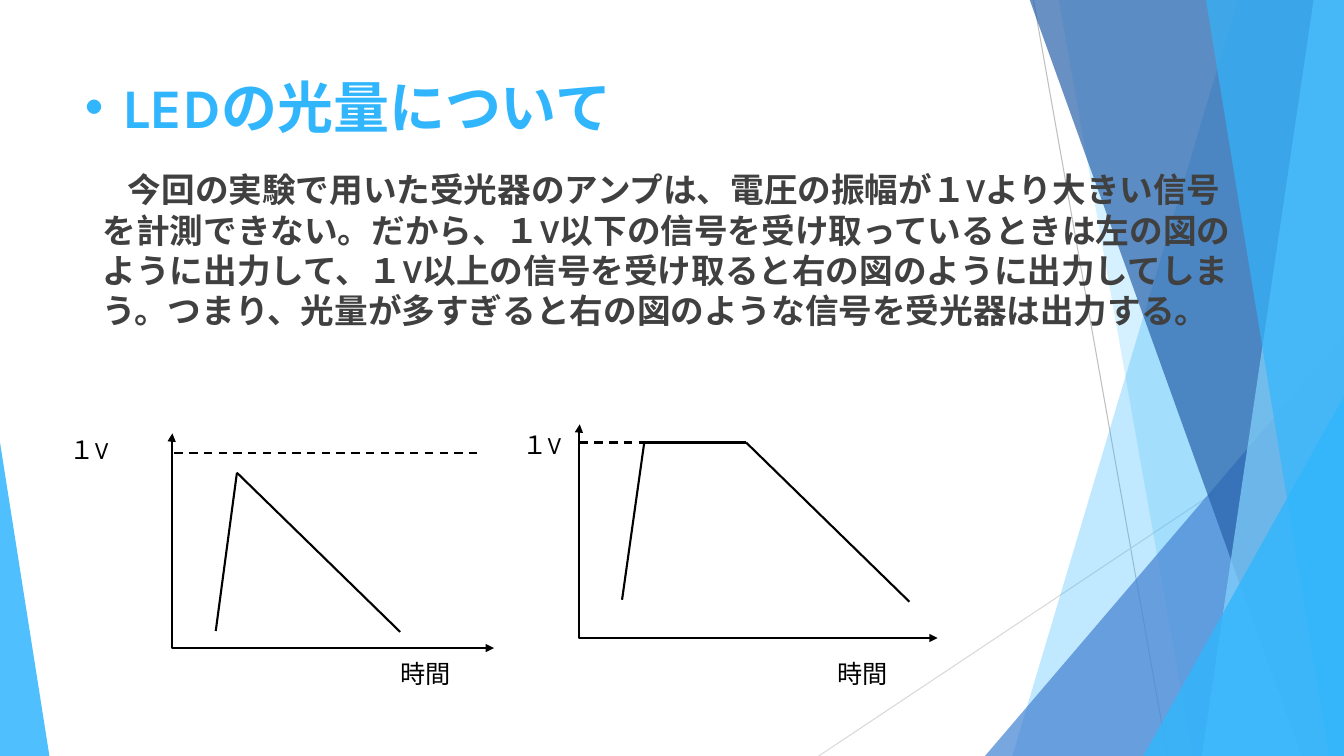
from dataclasses import dataclass

from lxml import etree
from pptx import Presentation
from pptx import util as u
from pptx.dml.color import RGBColor
from pptx.enum import dml, shapes, text
from pptx.oxml import ns


@dataclass(frozen=True)
class Theme:
    """Colours, font and type sizes of the slide."""
    sky: str = "31B6FD"
    pale: str = "83D3FE"
    blue: str = "4584D3"
    navy: str = "2862AA"
    grey: str = "BFBFBF"
    light: str = "D9D9D9"
    body: str = "404040"
    ink: str = "000000"
    font: str = "Karla"
    title_size: int = 40
    body_size: int = 24
    label_size: int = 18


class SlideBuilder:
    """Draws styled elements on one slide."""

    def __init__(self, slide, theme):
        """Keep the slide and its theme."""
        self.shapes = slide.shapes
        self.theme = theme

    def fill(self, sp, color, opacity):
        """Fill a shape with a translucent colour and no outline."""
        sp.shadow.inherit = False
        sp.line.fill.background()
        sp.fill.solid()
        sp.fill.fore_color.rgb = RGBColor.from_string(color)
        clr = sp._element.spPr.find(".//" + ns.qn("a:srgbClr"))
        etree.SubElement(clr, ns.qn("a:alpha"), val=str(opacity * 1000))

    def polygon(self, points, color, opacity):
        """Draw a closed outline."""
        pts = [(u.Inches(x), u.Inches(y)) for x, y in points]
        builder = self.shapes.build_freeform(*pts[0])
        builder.add_line_segments(pts[1:], close=True)
        self.fill(builder.convert_to_shape(), color, opacity)

    def triangle(self, box, apex, color, opacity):
        """Draw a triangle whose apex sits at a fraction of its width."""
        sp = self.shapes.add_shape(
            shapes.MSO_SHAPE.ISOSCELES_TRIANGLE, *map(u.Inches, box))
        sp.adjustments[0] = apex
        self.fill(sp, color, opacity)

    def line(self, start, end, color=None, width=1.5, dashed=False,
             kind=shapes.MSO_CONNECTOR.STRAIGHT):
        """Draw a connector without shadow and return it."""
        cxn = self.shapes.add_connector(kind, *map(u.Inches, start + end))
        cxn.line.color.rgb = RGBColor.from_string(color or self.theme.ink)
        cxn.line.width = u.Pt(width)
        if dashed:
            cxn.line.dash_style = dml.MSO_LINE.DASH
        etree.SubElement(cxn._element.spPr, ns.qn("a:effectLst"))
        return cxn

    def axes(self, time_end, volt_end):
        """Draw both axes as one elbow with an arrow at each end."""
        cxn = self.line(time_end, volt_end, kind=shapes.MSO_CONNECTOR.ELBOW)
        sp_pr = cxn._element.spPr
        guides = sp_pr.find(".//" + ns.qn("a:avLst"))
        etree.SubElement(guides, ns.qn("a:gd"), name="adj1", fmla="val 100200")
        for tag in ("a:headEnd", "a:tailEnd"):
            etree.SubElement(sp_pr.find(ns.qn("a:ln")), ns.qn(tag), type="triangle")

    def text(self, box, words, size, color=None, bold=False, indent=0):
        """Write one paragraph of text and return it."""
        tf = self.shapes.add_textbox(*map(u.Inches, box)).text_frame
        tf.word_wrap = True
        tf.vertical_anchor = text.MSO_ANCHOR.TOP
        p = tf.paragraphs[0]
        r = p.add_run()
        r.text = words
        p.font.name = self.theme.font
        p.font.size = u.Pt(size)
        p.font.bold = bold
        p.font.color.rgb = RGBColor.from_string(color or self.theme.ink)
        if indent:
            p._p.get_or_add_pPr().set("indent", str(u.Inches(indent)))
        return p

    def title(self, box, mark, words):
        """Write the heading with its leading mark set tight."""
        p = self.text(box, mark, self.theme.title_size, self.theme.sky, bold=True)
        p.runs[0].font._element.set("spc", "-1150")
        p.add_run().text = words


def draw_backdrop(s, theme):
    """Draw the translucent facets along the slide edges."""
    right, top, bottom = 13.33, -0.01, 7.5

    def facet(top_x, bottom_x, color, opacity):
        """Draw a facet from a slanted edge to the right border."""
        s.polygon([(top_x, top), (right, top), (right, bottom),
                   (bottom_x, bottom)], color, opacity)

    s.line((10.25, 0), (11.58, bottom), theme.grey, 0.75)
    s.line((right, 4.03), (8.12, bottom), theme.light, 0.75)
    facet(12.28, 10.04, theme.sky, 30)
    facet(10.5, 11.83, theme.sky, 20)
    s.triangle((9.77, 3.33, 3.56, 4.17), 1, theme.blue, 72)
    facet(10.21, 12.91, theme.navy, 70)
    facet(13.03, 11.92, theme.pale, 70)
    facet(11.96, 13.18, theme.sky, 65)
    s.triangle((11.34, 3.93, 1.99, 3.57), 1, theme.sky, 80)
    s.triangle((0, 4.39, 0.49, 3.11), 0, theme.sky, 85)


def draw_graphs(s, theme):
    """Draw the normal pulse and the clipped pulse."""
    s.axes((4.9, 6.43), (1.71, 4.3))
    s.axes((9.3, 6.33), (5.75, 4.21))
    for pulse in (
        [(2.14, 6.26), (2.35, 4.69), (3.97, 6.27)],
        [(6.17, 5.95), (6.39, 4.39), (7.4, 4.39), (9.02, 5.97)],
    ):
        for start, end in zip(pulse, pulse[1:]):
            s.line(start, end)
    s.line((5.75, 4.39), (6.39, 4.39), dashed=True)
    s.line((1.73, 4.49), (4.79, 4.49), dashed=True)
    for x, y, width, words in (
        (0.59, 4.26, 1.09, "１V"),
        (5.08, 4.21, 1.24, "１V"),
        (3.87, 6.48, 1.54, "時間"),
        (8.21, 6.48, 1.04, "時間"),
    ):
        s.text((x, y, width, 0.4), words, theme.label_size)


def main():
    """Build and save the slide."""
    theme = Theme()
    prs = Presentation()
    prs.slide_width, prs.slide_height = u.Inches(13.33), u.Inches(7.5)
    s = SlideBuilder(prs.slides.add_slide(prs.slide_layouts[6]), theme)
    draw_backdrop(s, theme)
    s.title((0.56, 0.67, 9.58, 1.44), "・", "LEDの光量について")
    draw_graphs(s, theme)
    s.text((0.92, 1.63, 11.5, 2.2),
           "今回の実験で用いた受光器のアンプは、電圧の振幅が１Vより大きい信号を計測できない。"
           "だから、１V以下の信号を受け取っているときは左の図のように出力して、"
           "１V以上の信号を受け取ると右の図のように出力してしまう。"
           "つまり、光量が多すぎると右の図のような信号を受光器は出力する。",
           theme.body_size, theme.body, bold=True, indent=0.25)
    prs.save("out.pptx")


if __name__ == "__main__":
    main()
